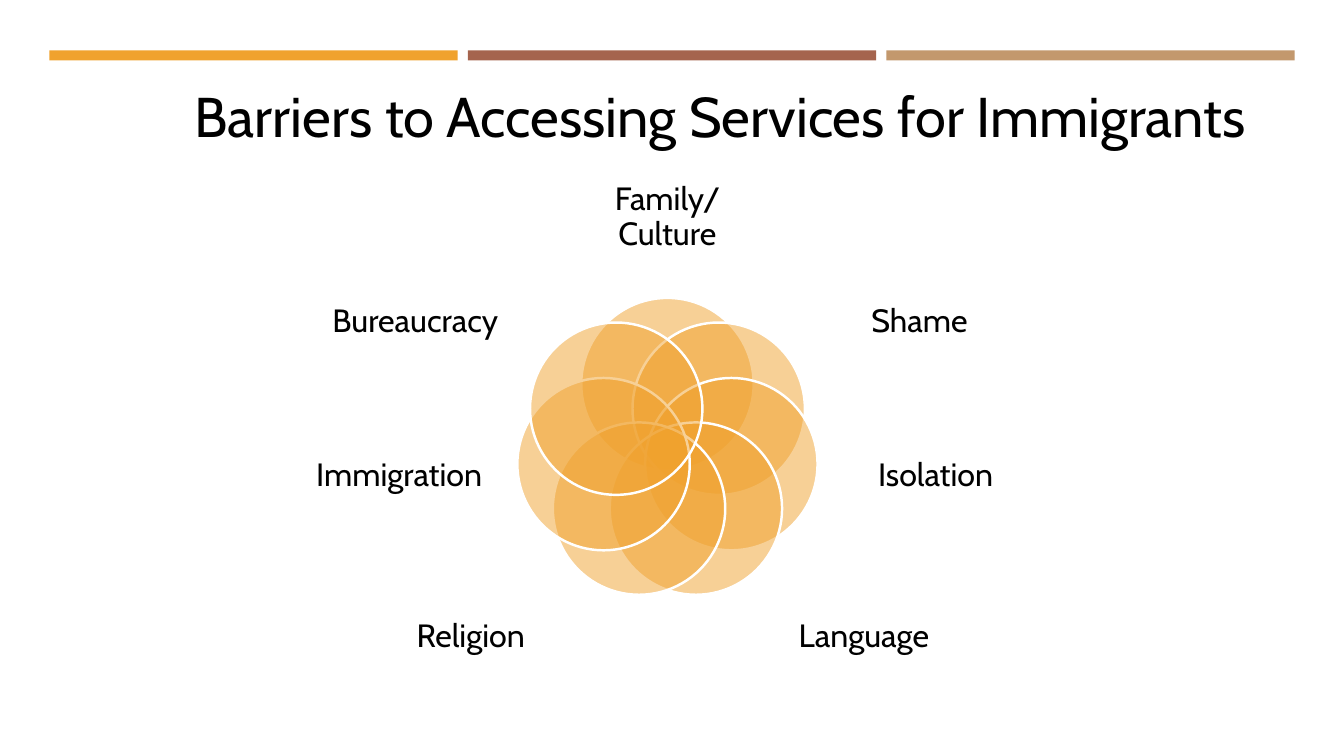
import math
from lxml import etree
from pptx import Presentation
from pptx.dml.color import RGBColor
from pptx.enum import shapes, text
from pptx.oxml import ns
from pptx.util import Inches, Pt

# Content
TITLE = "Barriers to Accessing Services for Immigrants"
ORANGE = RGBColor(0xF0, 0xA2, 0x2E)
BROWN = RGBColor(0xA5, 0x64, 0x4E)
TAN = RGBColor(0xC3, 0x98, 0x6D)
WHITE = RGBColor(0xFF, 0xFF, 0xFF)
BLACK = RGBColor(0, 0, 0)
BAR_COLORS = [ORANGE, BROWN, TAN]
# Clockwise from the top: label, centre offset across, centre height, box size
BARRIERS = [
    ("Family/Culture", 0, 2.16, (1.96, 1.05)),
    ("Shame", 2.5, 3.2, (1.86, 1.16)),
    ("Isolation", 2.66, 4.72, (1.82, 1.23)),
    ("Language", 1.95, 6.32, (1.96, 1.13)),
    ("Religion", -1.95, 6.32, (1.96, 1.13)),
    ("Immigration", -2.66, 4.72, (1.82, 1.23)),
    ("Bureaucracy", -2.5, 3.2, (1.86, 1.16)),
]

# Layout in inches
BAR_LEFT, BAR_TOP, BAR_WIDTH, BAR_HEIGHT, BAR_STEP = 0.49, 0.5, 4.05, 0.1, 4.15
CENTER_X, CENTER_Y, RING_RADIUS, DIAMETER = 6.62, 4.46, 0.65, 1.71


def box(center_x, center_y, width, height):
    return [Inches(value) for value in
            (center_x - width / 2, center_y - height / 2, width, height)]


def write(frame, words, size, frame_format, paragraph_format):
    for name, value in frame_format.items():
        setattr(frame, name, value)
    paragraph = frame.paragraphs[0]
    for name, value in paragraph_format.items():
        setattr(paragraph, name, value)
    run = paragraph.add_run()
    run.text = words
    run.font.name, run.font.size = "Cabin", Pt(size)
    run.font.color.rgb = BLACK


def add_filled(slide, kind, place, color):
    shape = slide.shapes.add_shape(kind, *place)
    shape.shadow.inherit = False
    shape.fill.solid()
    shape.fill.fore_color.rgb = color
    return shape


def add_petal(slide, angle):
    place = box(CENTER_X + RING_RADIUS * math.sin(angle),
                CENTER_Y - RING_RADIUS * math.cos(angle), DIAMETER, DIAMETER)
    petal = add_filled(slide, shapes.MSO_SHAPE.OVAL, place, ORANGE)
    petal.line.color.rgb = WHITE
    petal.line.width = Pt(1.75)
    # Half-transparent fill
    color = petal.fill._xPr.find(ns.qn("a:solidFill"))[0]
    etree.SubElement(color, ns.qn("a:alpha"), val="50000")


def main():
    presentation = Presentation()
    presentation.slide_width, presentation.slide_height = Inches(13.33), Inches(7.5)
    slide = presentation.slides.add_slide(presentation.slide_layouts[5])

    # Title
    title = slide.shapes.title
    title.left, title.top, title.width, title.height = (
        Inches(value) for value in (1.83, 0.76, 11.5, 1.08))
    write(title.text_frame, TITLE, 40,
          {"vertical_anchor": text.MSO_ANCHOR.TOP, "word_wrap": True},
          {"alignment": text.PP_ALIGN.LEFT})

    # Bars across the top
    for index, color in enumerate(BAR_COLORS):
        place = [Inches(value) for value in
                 (BAR_LEFT + index * BAR_STEP, BAR_TOP, BAR_WIDTH, BAR_HEIGHT)]
        bar = add_filled(slide, shapes.MSO_SHAPE.RECTANGLE, place, color)
        bar.line.fill.background()

    # Ring of overlapping circles with labels around it
    label_frame = {"word_wrap": True, "vertical_anchor": text.MSO_ANCHOR.MIDDLE,
                   "margin_left": 0, "margin_right": 0,
                   "margin_top": 0, "margin_bottom": 0}
    label_paragraph = {"alignment": text.PP_ALIGN.CENTER, "line_spacing": 0.9}
    for index, (label, offset, center_y, size) in enumerate(BARRIERS):
        add_petal(slide, 2 * math.pi * index / len(BARRIERS))
        label_box = slide.shapes.add_textbox(*box(CENTER_X + offset, center_y, *size))
        write(label_box.text_frame, label, 23, label_frame, label_paragraph)

    presentation.save("out.pptx")


if __name__ == "__main__":
    main()
